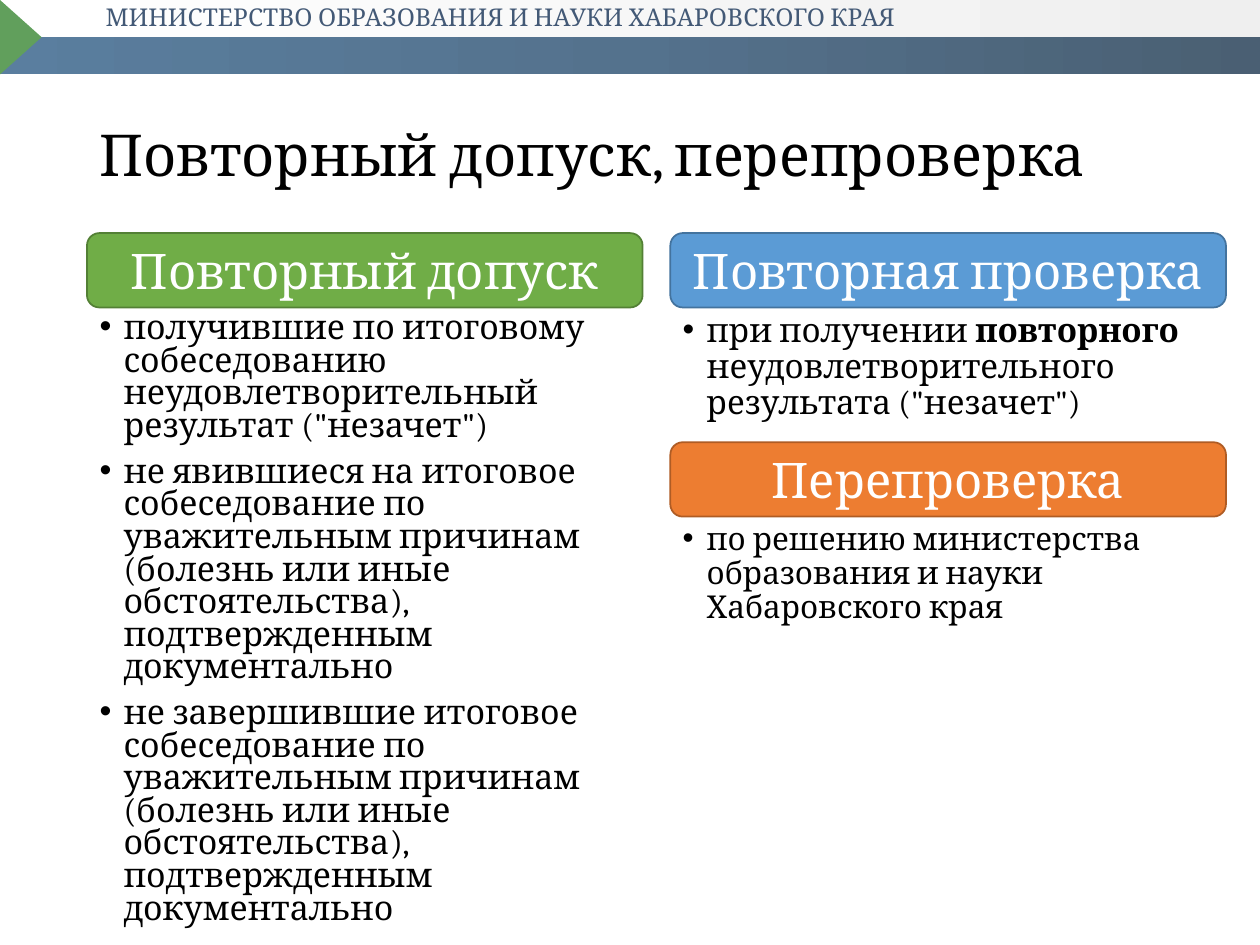
from lxml import etree
from pptx import Presentation
from pptx.dml.color import RGBColor
from pptx.enum.shapes import MSO_SHAPE
from pptx.enum.text import MSO_ANCHOR, MSO_AUTO_SIZE, PP_ALIGN
from pptx.oxml.ns import qn
from pptx.util import Inches, Pt

RECTANGLE = MSO_SHAPE.RECTANGLE
TRIANGLE = MSO_SHAPE.ISOSCELES_TRIANGLE
ROUNDED = MSO_SHAPE.ROUNDED_RECTANGLE
TOP, MIDDLE = MSO_ANCHOR.TOP, MSO_ANCHOR.MIDDLE
LEFT, CENTER = PP_ALIGN.LEFT, PP_ALIGN.CENTER
NO_AUTOFIT = MSO_AUTO_SIZE.NONE

FONT = "Cambria"
BLACK = RGBColor(0x00, 0x00, 0x00)
WHITE = RGBColor(0xFF, 0xFF, 0xFF)
NAVY = RGBColor(0x14, 0x30, 0x54)
FLAG_GREEN = RGBColor(0x3A, 0x88, 0x34)
GREEN, GREEN_EDGE = RGBColor(0x70, 0xAD, 0x47), RGBColor(0x53, 0x80, 0x35)
BLUE, BLUE_EDGE = RGBColor(0x5B, 0x9B, 0xD5), RGBColor(0x43, 0x73, 0x9E)
ORANGE, ORANGE_EDGE = RGBColor(0xED, 0x7D, 0x31), RGBColor(0xAF, 0x5C, 0x24)
PALE_BAND = [(0, RGBColor(0xEC, 0xEC, 0xEC)), (100, WHITE)]
DARK_BAND = [(0, RGBColor(0x1D, 0x38, 0x50)), (50, RGBColor(0x2A, 0x4F, 0x71)),
             (100, RGBColor(0x31, 0x5E, 0x87))]

# Two columns of equal width; each heading sits directly on its list
LEFT_COLUMN, RIGHT_COLUMN = 0.69, 5.32
COLUMN_WIDTH, HEADING_HEIGHT = 4.41, 0.59
FIRST_ROW, SECOND_ROW = 1.85, 3.51

REASON = ("собеседование по уважительным причинам (болезнь или иные "
          "обстоятельства), подтвержденным документально")
ADMISSION = [
    [('получившие по итоговому собеседованию неудовлетворительный '
      'результат ("незачет")', False)],
    [("не явившиеся на итоговое " + REASON, False)],
    [("не завершившие итоговое " + REASON, False)],
]
SECOND_CHECK = [[("при получении ", False), ("повторного", True),
                 (' неудовлетворительного результата ("незачет")', False)]]
RECHECK = [[("по решению министерства образования и науки "
             "Хабаровского края", False)]]


def place(shape, left, top, width, height):
    shape.left, shape.top = Inches(left), Inches(top)
    shape.width, shape.height = Inches(width), Inches(height)


def style_font(font, size, color):
    font.name, font.size, font.color.rgb = FONT, Pt(size), color


def write_line(shape, text, size, color, align):
    frame = shape.text_frame
    frame.text = text
    frame.word_wrap = True
    frame.auto_size = NO_AUTOFIT
    frame.vertical_anchor = MIDDLE
    para = frame.paragraphs[0]
    para.alignment = align
    style_font(para.runs[0].font, size, color)


def add_block(page, kind, left, top, width, height, color=None):
    block = page.shapes.add_shape(kind, Inches(left), Inches(top),
                                  Inches(width), Inches(height))
    block.shadow.inherit = False
    block.line.fill.background()
    if color is not None:
        block.fill.solid()
        block.fill.fore_color.rgb = color
    return block


def fill_gradient(shape, stops):
    shape.fill.gradient()
    shape.fill.gradient_angle = 180
    stop_list = shape.element.spPr.find(".//" + qn("a:gsLst"))
    for stop in list(stop_list):
        stop_list.remove(stop)
    for position, color in stops:
        stop = etree.SubElement(stop_list, qn("a:gs"), pos=str(position * 1000))
        etree.SubElement(stop, qn("a:srgbClr"), val=str(color))


def add_banner(page):
    fill_gradient(add_block(page, RECTANGLE, 0, 0, 10, 0.59), PALE_BAND)
    fill_gradient(add_block(page, RECTANGLE, 0, 0.29, 10, 0.3), DARK_BAND)
    flag = add_block(page, TRIANGLE, -0.13, 0.13, 0.59, 0.33, FLAG_GREEN)
    flag.rotation = 90
    ministry = page.shapes.add_textbox(Inches(0.74), Inches(-0.07),
                                       Inches(8.94), Inches(0.41))
    write_line(ministry, "МИНИСТЕРСТВО ОБРАЗОВАНИЯ И НАУКИ ХАБАРОВСКОГО КРАЯ",
               14, NAVY, LEFT)
    # Translucent white veil over the whole banner
    veil = add_block(page, RECTANGLE, 0, 0, 10, 0.59, WHITE)
    veil_color = veil.element.spPr.find(".//" + qn("a:srgbClr"))
    etree.SubElement(veil_color, qn("a:alpha"), val="20000")


def add_heading(page, text, left, top, color, edge):
    heading = add_block(page, ROUNDED, left, top, COLUMN_WIDTH,
                        HEADING_HEIGHT, color)
    heading.line.color.rgb = edge
    heading.line.width = Pt(1)
    write_line(heading, text, 28, WHITE, CENTER)


def write_bullets(box, items, size, spacing):
    frame = box.text_frame
    frame.word_wrap = True
    frame.auto_size = NO_AUTOFIT
    frame.vertical_anchor = TOP
    for index, item in enumerate(items):
        para = frame.add_paragraph() if index else frame.paragraphs[0]
        properties = para._p.get_or_add_pPr()
        properties.set("marL", str(Inches(0.19)))
        properties.set("indent", str(Inches(-0.19)))
        etree.SubElement(properties, qn("a:buFont"), typeface="Arial")
        etree.SubElement(properties, qn("a:buChar"), char="•")
        para.alignment = LEFT
        para.line_spacing = spacing
        para.space_before = Pt(7.5 if index else 0)
        for text, bold in item:
            span = para.add_run()
            span.text = text
            span.font.bold = bold
            style_font(span.font, size, BLACK)


def add_list(page, items, left, top, height, size):
    box = page.shapes.add_textbox(Inches(left), Inches(top),
                                  Inches(COLUMN_WIDTH), Inches(height))
    write_bullets(box, items, size, 0.9)


def main():
    deck = Presentation()
    deck.slide_width, deck.slide_height = Inches(10), Inches(7.5)
    page = deck.slides.add_slide(deck.slide_layouts[1])

    add_banner(page)

    # Title
    title = page.shapes.title
    place(title, 0.69, 0.66, 8.62, 1.19)
    write_line(title, "Повторный допуск, перепроверка", 33, BLACK, LEFT)
    title.text_frame.paragraphs[0].line_spacing = 0.9

    # Left column: repeated admission
    body = page.placeholders[1]
    place(body, LEFT_COLUMN, FIRST_ROW + HEADING_HEIGHT, COLUMN_WIDTH, 4.76)
    write_bullets(body, ADMISSION, 19.4, 0.8)
    add_heading(page, "Повторный допуск", LEFT_COLUMN, FIRST_ROW,
                GREEN, GREEN_EDGE)

    # Right column: second check and recheck
    add_heading(page, "Повторная проверка", RIGHT_COLUMN, FIRST_ROW,
                BLUE, BLUE_EDGE)
    add_list(page, SECOND_CHECK, RIGHT_COLUMN, FIRST_ROW + HEADING_HEIGHT,
             0.97, 19)
    add_heading(page, "Перепроверка", RIGHT_COLUMN, SECOND_ROW,
                ORANGE, ORANGE_EDGE)
    add_list(page, RECHECK, RIGHT_COLUMN, SECOND_ROW + HEADING_HEIGHT,
             0.89, 18)

    deck.save("out.pptx")


if __name__ == "__main__":
    main()
